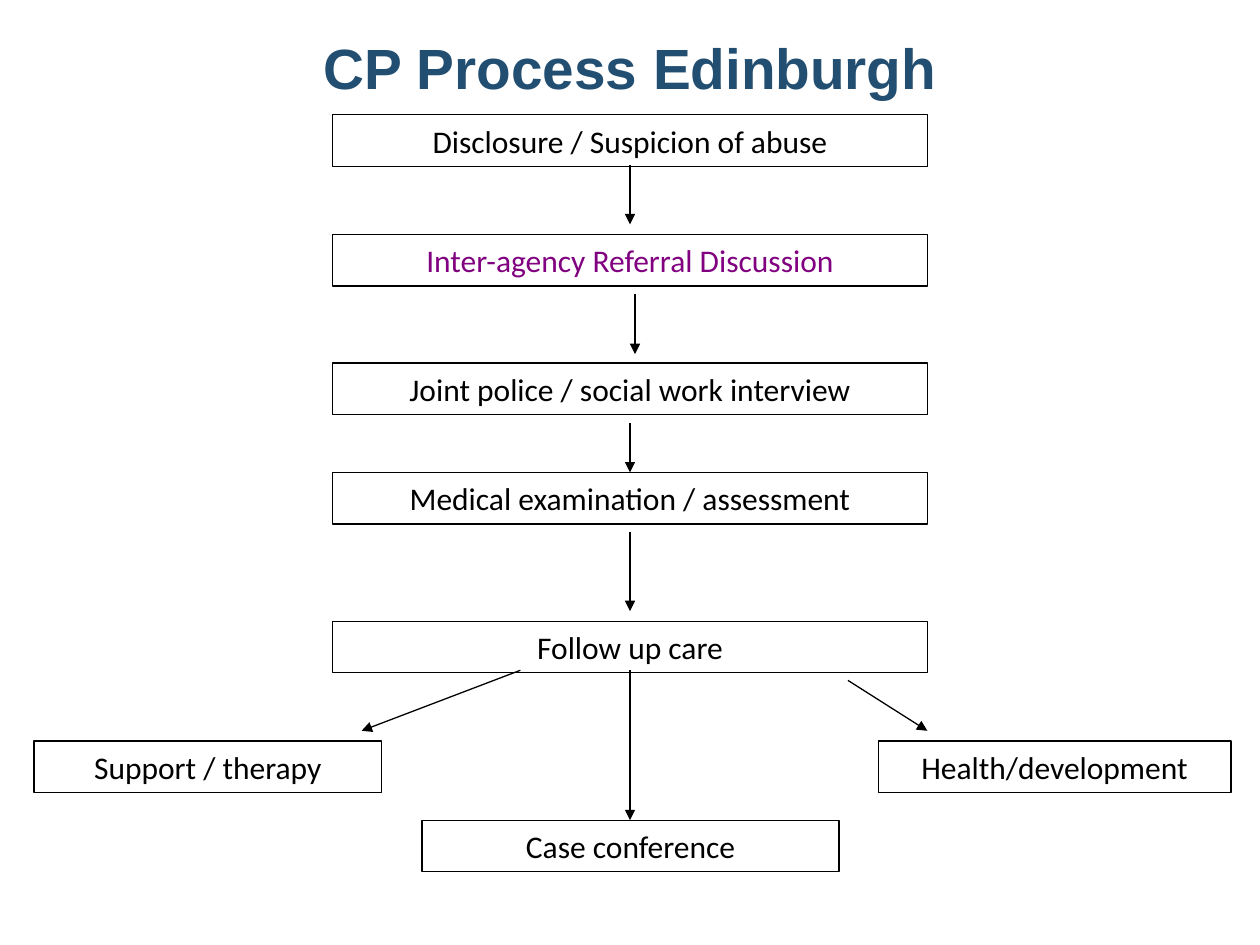
import pptx
import pptx.util
import pptx.dml.color
import pptx.enum.shapes
import pptx.enum.text
from lxml import etree

Inches, Pt = pptx.util.Inches, pptx.util.Pt
RGBColor = pptx.dml.color.RGBColor
ALIGN, ANCHOR = pptx.enum.text.PP_ALIGN, pptx.enum.text.MSO_ANCHOR

BLACK = RGBColor(0x00, 0x00, 0x00)
PURPLE = RGBColor(0x80, 0x00, 0x80)
NAVY = RGBColor(0x22, 0x4E, 0x71)

# Content: main steps as (text, top, colour), outcomes as (text, left, top, width)
TITLE = "CP Process Edinburgh"
STEPS = [
    ("Disclosure / Suspicion of abuse", 0.91, BLACK),
    ("Inter-agency Referral Discussion", 1.86, PURPLE),
    ("Joint police / social work interview", 2.88, BLACK),
    ("Medical examination / assessment", 3.75, BLACK),
    ("Follow up care", 4.93, BLACK),
]
ENDS = [
    ("Support / therapy", 0.27, 5.88, 2.76),
    ("Health/development", 6.97, 5.88, 2.8),
    ("Case conference", 3.35, 6.51, 3.31),
]
# Arrows as (from x, from y, to x, to y)
MID = 5
ARROWS = [
    (MID, 1.31, MID, 1.78),
    (5.04, 2.33, 5.04, 2.81),
    (MID, 3.36, MID, 3.75),
    (MID, 4.22, MID, 4.85),
    (4.13, 5.32, 2.87, 5.8),
    (MID, 5.32, MID, 6.51),
    (6.73, 5.4, 7.36, 5.8),
]
STEP_W, BOX_H = 4.72, 0.41
TITLE_FONT = {"name": "Arial", "size": Pt(32.4), "bold": True}
BOX_FONT = {"name": "Calibri", "size": Pt(18), "bold": False}


def write(shape, text, look, color):
    frame = shape.text_frame
    frame.word_wrap = True
    frame.vertical_anchor = ANCHOR.MIDDLE
    para = frame.paragraphs[0]
    para.alignment = ALIGN.CENTER
    run = para.add_run()
    run.text = text
    for key, value in look.items():
        setattr(run.font, key, value)
    run.font.color.rgb = color


def ink(line):
    line.color.rgb = BLACK
    line.width = Pt(0.75)


def add_box(slide, text, left, top, width, color=BLACK):
    box = slide.shapes.add_shape(
        pptx.enum.shapes.MSO_SHAPE.RECTANGLE,
        *map(Inches, (left, top, width, BOX_H)))
    box.shadow.inherit = False
    box.fill.background()
    ink(box.line)
    write(box, text, BOX_FONT, color)


def add_arrow(slide, ends):
    arrow = slide.shapes.add_connector(
        pptx.enum.shapes.MSO_CONNECTOR.STRAIGHT, *map(Inches, ends))
    ink(arrow.line)
    tag = pptx.oxml.ns.qn
    etree.SubElement(arrow.line._get_or_add_ln(), tag("a:tailEnd"), type="triangle")
    etree.SubElement(arrow._element.spPr, tag("a:effectLst"))


def main():
    deck = pptx.Presentation()
    deck.slide_width, deck.slide_height = Inches(10), Inches(7.5)
    slide = deck.slides.add_slide(deck.slide_layouts[5])

    # Title
    title = slide.shapes.title
    title.left, title.top, title.width, title.height = map(
        Inches, (0.5, 0.3, 9, 0.46))
    write(title, TITLE, TITLE_FONT, NAVY)

    # Main steps, centred on the slide
    for text, top, color in STEPS:
        add_box(slide, text, MID - STEP_W / 2, top, STEP_W, color)

    # Outcomes
    for end in ENDS:
        add_box(slide, *end)

    # Arrows
    for ends in ARROWS:
        add_arrow(slide, ends)

    deck.save("out.pptx")


if __name__ == "__main__":
    main()
